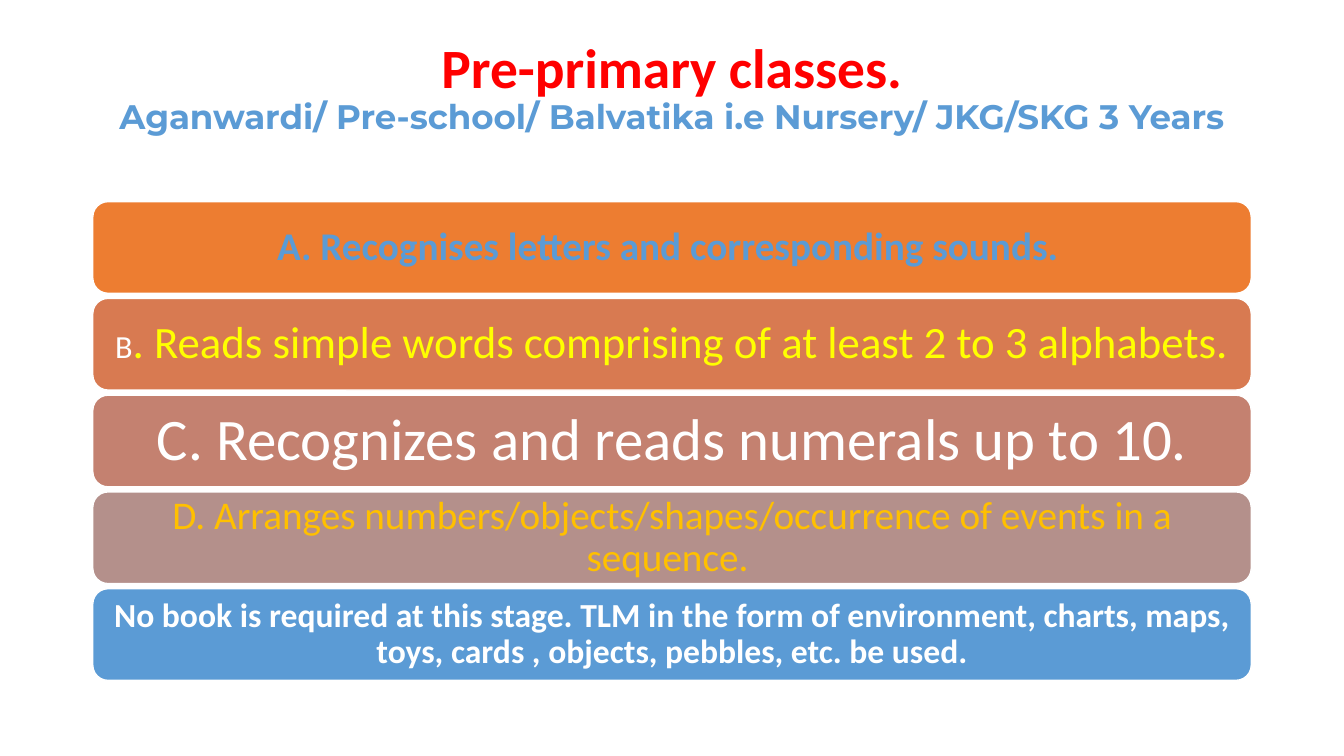
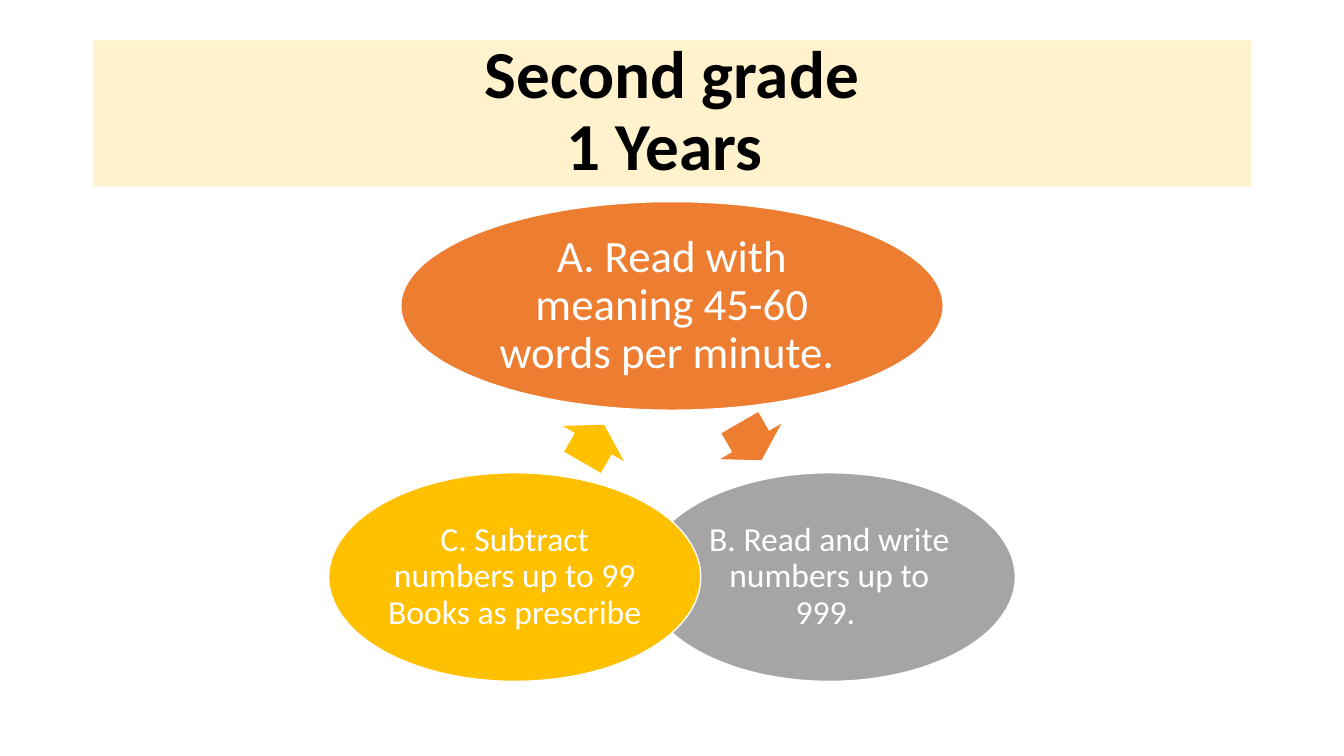
from pptx import Presentation
from pptx.dml.color import RGBColor
from pptx.enum.shapes import MSO_SHAPE
from pptx.enum.text import MSO_ANCHOR, PP_ALIGN
from pptx.util import Inches, Pt

RECTANGLE = MSO_SHAPE.RECTANGLE
ROUNDED = MSO_SHAPE.ROUNDED_RECTANGLE
OVAL = MSO_SHAPE.OVAL
ARROW = MSO_SHAPE.RIGHT_ARROW
TOP, MIDDLE = MSO_ANCHOR.TOP, MSO_ANCHOR.MIDDLE
CENTER = PP_ALIGN.CENTER

COLORS = {
    "white": "FFFFFF", "black": "000000", "red": "FF0000", "yellow": "FFFF00",
    "blue": "5B9BD5", "orange": "ED7D31", "gold": "FFC000", "gray": "A5A5A5",
    "cream": "FFF2CC", "terracotta": "D87A51", "rose": "C48170", "taupe": "B4908B",
}

# Slide grid, in inches
SLIDE_WIDTH, SLIDE_HEIGHT = 13.33, 7.5
MARGIN = 0.92
CONTENT_WIDTH = SLIDE_WIDTH - 2 * MARGIN
TITLE_TOP = 0.4
BODY_TOP = 2.0
BAR_HEIGHT, BAR_PITCH = 0.91, 0.96
CENTER_X = SLIDE_WIDTH / 2
OVAL_HEIGHT = 2.07


def color(name):
    return RGBColor.from_string(COLORS[name])


def run(text, size, tint="white", bold=False, font="Calibri"):
    return text, size, tint, bold, font


def fill_text(shape, lines, anchor=MIDDLE, inset=(0.1, 0.05)):
    """Write centred lines, each a list of runs, into a shape."""
    text_frame = shape.text_frame
    text_frame.word_wrap = True
    text_frame.vertical_anchor = anchor
    text_frame.margin_left = text_frame.margin_right = Inches(inset[0])
    text_frame.margin_top = text_frame.margin_bottom = Inches(inset[1])
    text_frame.text = "\n".join("" for _ in lines)
    for paragraph, runs in zip(text_frame.paragraphs, lines):
        paragraph.alignment = CENTER
        paragraph.line_spacing = 0.9
        for text, size, tint, bold, font in runs:
            piece = paragraph.add_run()
            piece.text = text
            piece.font.size = Pt(size)
            piece.font.bold = bold
            piece.font.name = font
            piece.font.color.rgb = color(tint)


def add_block(slide, kind, left, top, width, height, fill=None, outlined=False):
    shape = slide.shapes.add_shape(
        kind, Inches(left), Inches(top), Inches(width), Inches(height))
    shape.shadow.inherit = False
    if fill:
        shape.fill.solid()
        shape.fill.fore_color.rgb = color(fill)
    else:
        shape.fill.background()
    if outlined:
        shape.line.color.rgb = color("white")
        shape.line.width = Pt(1)
    else:
        shape.line.fill.background()
    return shape


def add_title(slide, lines, height, fill=None):
    band = add_block(slide, RECTANGLE, MARGIN, TITLE_TOP, CONTENT_WIDTH, height, fill)
    fill_text(band, lines, TOP, (0.1, 0))


def add_bar(slide, row, fill, inset, runs):
    bar = add_block(slide, ROUNDED, MARGIN, BODY_TOP + row * BAR_PITCH,
                    CONTENT_WIDTH, BAR_HEIGHT, fill, True)
    fill_text(bar, [runs], inset=inset)


def add_oval(slide, offset, top, width, fill, inset, text, size):
    """Place an oval whose centre is offset from the slide's middle."""
    oval = add_block(slide, OVAL, CENTER_X + offset - width / 2, top,
                     width, OVAL_HEIGHT, fill, True)
    fill_text(oval, [[run(text, size)]], inset=(inset, inset))


def add_cycle_arrow(slide, offset, top, rotation, fill):
    width, height = 0.43, 0.7
    arrow = add_block(slide, ARROW, CENTER_X + offset - width / 2, top,
                      width, height, fill)
    arrow.adjustments[0] = 0.6
    arrow.adjustments[1] = 0.5
    arrow.rotation = rotation


def build_pre_primary(slide):
    add_title(slide, [
        [run("Pre-primary classes.", 39.6, "red", True)],
        [run("Aganwardi/ Pre-school/ Balvatika i.e Nursery/ JKG/SKG 3 Years",
             24.3, "blue", True, "Montserrat")],
    ], BODY_TOP - TITLE_TOP)
    bars = [
        ("orange", (0.12, 0.06),
         [run("A. Recognises letters and corresponding sounds. ", 28, "blue", True)]),
        ("terracotta", (0.1, 0.05),
         [run("B", 23),
          run(". Reads simple words comprising of at least 2 to 3 alphabets.",
              32, "yellow")]),
        ("rose", (0.17, 0.09),
         [run("C. Recognizes and reads numerals up to 10.", 42)]),
        ("taupe", (0.12, 0.06),
         [run("D. Arranges numbers/objects/shapes/occurrence of events in a sequence. ",
              28, "gold")]),
        ("blue", (0.1, 0.05),
         [run("No book is required at this stage. TLM in the form of environment, "
              "charts, maps, toys, cards , objects, pebbles, etc. be used.",
              24, bold=True)]),
    ]
    for row, (fill, inset, runs) in enumerate(bars):
        add_bar(slide, row, fill, inset, runs)


def build_second_grade(slide):
    add_title(slide, [[run(text, 48, "black", True)]
                      for text in ("Second grade", "1 Years ")], 1.45, "cream")
    # Cycle of three goals, the last overlapping the second
    lower_top, lower_offset, lower_width = 4.69, 1.56, 3.69
    add_oval(slide, 0, BODY_TOP, 5.38, "orange", 0.04,
             "A. Read with meaning 45-60 words per minute. ", 32)
    add_cycle_arrow(slide, 0.78, 4.03, 60, "orange")
    add_oval(slide, lower_offset, lower_top, lower_width, "gray", 0.03,
             "B. Read and write numbers up to 999. ", 24)
    add_oval(slide, -lower_offset, lower_top, lower_width, "gold", 0.03,
             "C. Subtract numbers up to 99 Books as prescribe", 24)
    add_cycle_arrow(slide, -0.78, 4.05, 300, "gold")


def main():
    presentation = Presentation()
    presentation.slide_width = Inches(SLIDE_WIDTH)
    presentation.slide_height = Inches(SLIDE_HEIGHT)
    blank = presentation.slide_layouts[6]
    for build in (build_pre_primary, build_second_grade):
        build(presentation.slides.add_slide(blank))
    presentation.save("out.pptx")


if __name__ == "__main__":
    main()
